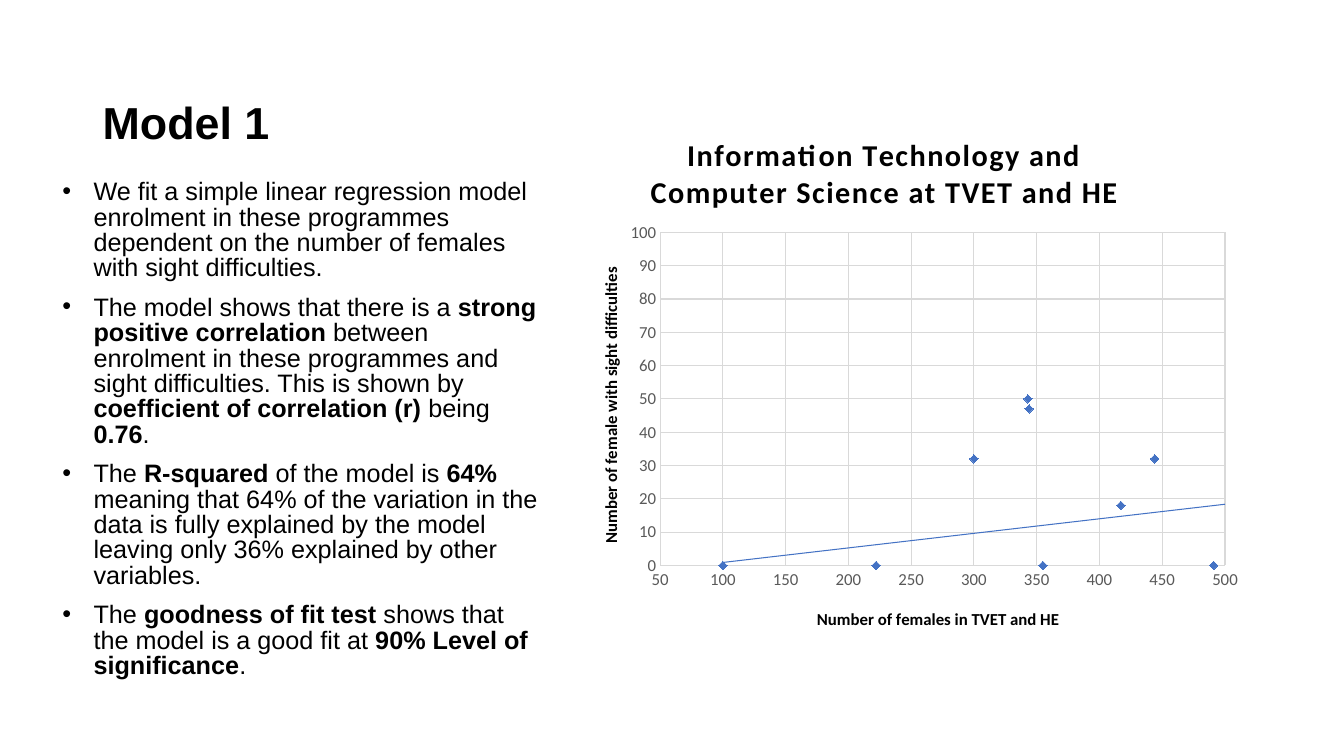
from dataclasses import dataclass

from lxml.etree import SubElement
from pptx import Presentation
from pptx.chart.data import XyChartData
from pptx.dml.color import RGBColor
from pptx.enum.chart import XL_CHART_TYPE as ChartType
from pptx.enum.chart import XL_MARKER_STYLE as Marker
from pptx.enum.chart import XL_TICK_MARK as Tick
from pptx.enum.text import MSO_ANCHOR as Anchor
from pptx.oxml import parse_xml
from pptx.oxml.ns import nsdecls, qn
from pptx.util import Inches, Pt

BLACK = RGBColor(0, 0, 0)
GRAY = RGBColor(0x59, 0x59, 0x59)
GRID = RGBColor(0xD9, 0xD9, 0xD9)
BLUE = RGBColor(0x44, 0x72, 0xC4)


@dataclass
class Box:
    left: float
    top: float
    width: float
    height: float

    def lengths(self) -> list:
        return [Inches(n) for n in (self.left, self.top, self.width, self.height)]


@dataclass
class AxisSpec:
    title: str
    title_x: float
    title_y: float
    scale: dict


HEADING_BOX = Box(0.92, 0.5, 4.3, 1.03)
FINDINGS_BOX = Box(0.52, 1.74, 4.95, 4.88)
CHART_BOX = Box(5.67, 1.08, 6.75, 5.33)

HEADING_FONT = {"name": "Arial", "size": Pt(32), "bold": True}
FINDING_FONT = {"name": "Arial", "size": Pt(18)}
CHART_TITLE_FONT = {"name": "Calibri", "size": Pt(21.6), "bold": True}
AXIS_TITLE_FONT = {"name": "Calibri", "size": Pt(12), "bold": True}
TICK_FONT = {"name": "Calibri", "size": Pt(12), "bold": False}

# Text between asterisks is bold.
FINDINGS = [
    "We fit a simple linear regression model enrolment in these programmes "
    "dependent on the number of females with sight difficulties.",
    "The model shows that there is a *strong positive correlation *between "
    "enrolment in these programmes and sight difficulties. This is shown by "
    "*coefficient of correlation (r) *being *0.76*.",
    "The *R-squared *of the model is *64%* meaning that 64% of the variation in "
    "the data is fully explained by the model leaving only 36% explained by "
    "other variables.",
    "The *goodness of fit test* shows that the model is a good fit at "
    "*90% Level of significance*.",
]

CHART_TITLE = "Information Technology and Computer Science at TVET and HE"
FEMALES_AXIS = AxisSpec(
    "Number of females in TVET and HE", 0.356, 0.923,
    {"minimum_scale": 50, "maximum_scale": 500, "major_unit": 50})
SIGHT_AXIS = AxisSpec(
    "Number of female with sight difficulties", 0.036, 0.289,
    {"minimum_scale": 0, "maximum_scale": 100, "major_unit": 10})

FEMALES = [
    2000, 3000, 417, 2000, 1000, 1000, 100, 5000, 222, 355, 1000, 1000, 2000,
    5000, 1000, 2000, 1000, 1000, 4000, 491, 343, 300, 1000, 4000, 2000, 2000,
    3000, 1000, 2000, 1000, 1000, 3000, 3000, 344, 1000, 2000, 2000, 2000, 1000,
    444, 1000, 1000, 1000, 35000, 104000]
SIGHT = [
    0, 27, 18, 167, 72, 22, 0, 386, 0, 0, 24, 47, 58, 176, 17, 0, 59, 30, 320, 0,
    50, 32, 101, 36, 6, 51, 16, 12, 18, 16, 125, 167, 104, 47, 132, 94, 133, 35,
    16, 32, 45, 0, 20, 1757, 4468]


def apply(target, values: dict) -> None:
    for name, value in values.items():
        setattr(target, name, value)


def style_font(font, values: dict, color: RGBColor = BLACK) -> None:
    apply(font, values)
    font.color.rgb = color


def style_line(line, color: RGBColor) -> None:
    line.color.rgb = color
    line.width = Pt(0.75)


def add_text_frame(slide, box: Box, anchor):
    frame = slide.shapes.add_textbox(*box.lengths()).text_frame
    apply(frame, {"word_wrap": True, "vertical_anchor": anchor})
    return frame


def add_heading(slide) -> None:
    paragraph = add_text_frame(slide, HEADING_BOX, Anchor.BOTTOM).paragraphs[0]
    paragraph.line_spacing = 0.9
    run = paragraph.add_run()
    run.text = "Model 1"
    style_font(run.font, HEADING_FONT)


def add_findings(slide) -> None:
    frame = add_text_frame(slide, FINDINGS_BOX, Anchor.TOP)
    for number, finding in enumerate(FINDINGS):
        paragraph = frame.add_paragraph() if number else frame.paragraphs[0]
        apply(paragraph, {"line_spacing": 0.84, "space_before": Pt(10)})
        properties = paragraph._p.get_or_add_pPr()
        properties.set("marL", str(Inches(0.31)))
        properties.set("indent", str(-Inches(0.31)))
        SubElement(properties, qn("a:buFont")).set("typeface", "Arial")
        SubElement(properties, qn("a:buChar")).set("char", "•")
        for part, words in enumerate(finding.split("*")):
            run = paragraph.add_run()
            run.text = words
            style_font(run.font, {**FINDING_FONT, "bold": part % 2 == 1})


def layout_xml(places: dict, inner: bool = False):
    target = '<c:layoutTarget val="inner"/>' if inner else ""
    modes = "".join(f'<c:{key}Mode val="edge"/>' for key in ("x", "y"))
    values = "".join(f'<c:{key} val="{value}"/>' for key, value in places.items())
    return parse_xml(f'<c:layout {nsdecls("c")}><c:manualLayout>{target}{modes}'
                     f'{values}</c:manualLayout></c:layout>')


def set_title(title, text: str, font: dict, x: float, y: float):
    paragraph = title.text_frame.paragraphs[0]
    run = paragraph.add_run()
    run.text = text
    style_font(run.font, font)
    element = title._element
    for layout in element.findall(qn("c:layout")):
        element.remove(layout)
    element.find(qn("c:tx")).addnext(layout_xml({"x": x, "y": y}))
    return run


def style_axis(axis, spec: AxisSpec) -> None:
    apply(axis, {**spec.scale, "has_major_gridlines": True, "has_title": True,
                 "major_tick_mark": Tick.NONE, "minor_tick_mark": Tick.NONE})
    style_line(axis.format.line, GRID)
    style_line(axis.major_gridlines.format.line, GRID)
    apply(axis.tick_labels, {"number_format": "0", "number_format_is_linked": False})
    style_font(axis.tick_labels.font, TICK_FONT, GRAY)
    set_title(axis.axis_title, spec.title, AXIS_TITLE_FONT, spec.title_x, spec.title_y)


def style_series(series) -> None:
    series.format.line.fill.background()
    apply(series.marker, {"style": Marker.DIAMOND, "size": 6})
    series.marker.format.fill.solid()
    series.marker.format.fill.fore_color.rgb = BLUE
    style_line(series.marker.format.line, BLUE)
    trend = parse_xml(
        f'<c:trendline {nsdecls("c", "a")}><c:spPr><a:ln w="{Pt(0.75)}"><a:solidFill>'
        f'<a:srgbClr val="{BLUE}"/></a:solidFill></a:ln></c:spPr>'
        '<c:trendlineType val="linear"/><c:dispRSqr val="0"/><c:dispEq val="0"/>'
        '</c:trendline>')
    series._element.find(qn("c:xVal")).addprevious(trend)


def add_enrolment_chart(slide) -> None:
    data = XyChartData()
    enrolment = data.add_series("Series 1")
    for females, sight in zip(FEMALES, SIGHT):
        enrolment.add_data_point(females, sight)
    chart = slide.shapes.add_chart(
        ChartType.XY_SCATTER, *CHART_BOX.lengths(), data).chart
    apply(chart, {"has_legend": False, "has_title": True})
    style_font(chart.font, {"name": "Calibri", "size": Pt(10)})
    run = set_title(chart.chart_title, CHART_TITLE, CHART_TITLE_FONT, 0.108, 0.035)
    run.font._element.set("spc", "100")
    style_axis(chart.category_axis, FEMALES_AXIS)
    style_axis(chart.value_axis, SIGHT_AXIS)
    chart.plots[0].vary_by_categories = False
    style_series(chart.plots[0].series[0])
    area = chart._chartSpace.chart.plotArea
    for layout in area.findall(qn("c:layout")):
        area.remove(layout)
    area.insert(0, layout_xml({"x": 0.13, "y": 0.23, "w": 0.83, "h": 0.62}, True))


def main() -> None:
    deck = Presentation()
    apply(deck, {"slide_width": Inches(13.33), "slide_height": Inches(7.5)})
    slide = deck.slides.add_slide(deck.slide_layouts[6])
    add_heading(slide)
    add_enrolment_chart(slide)
    add_findings(slide)
    deck.save("out.pptx")


if __name__ == "__main__":
    main()
